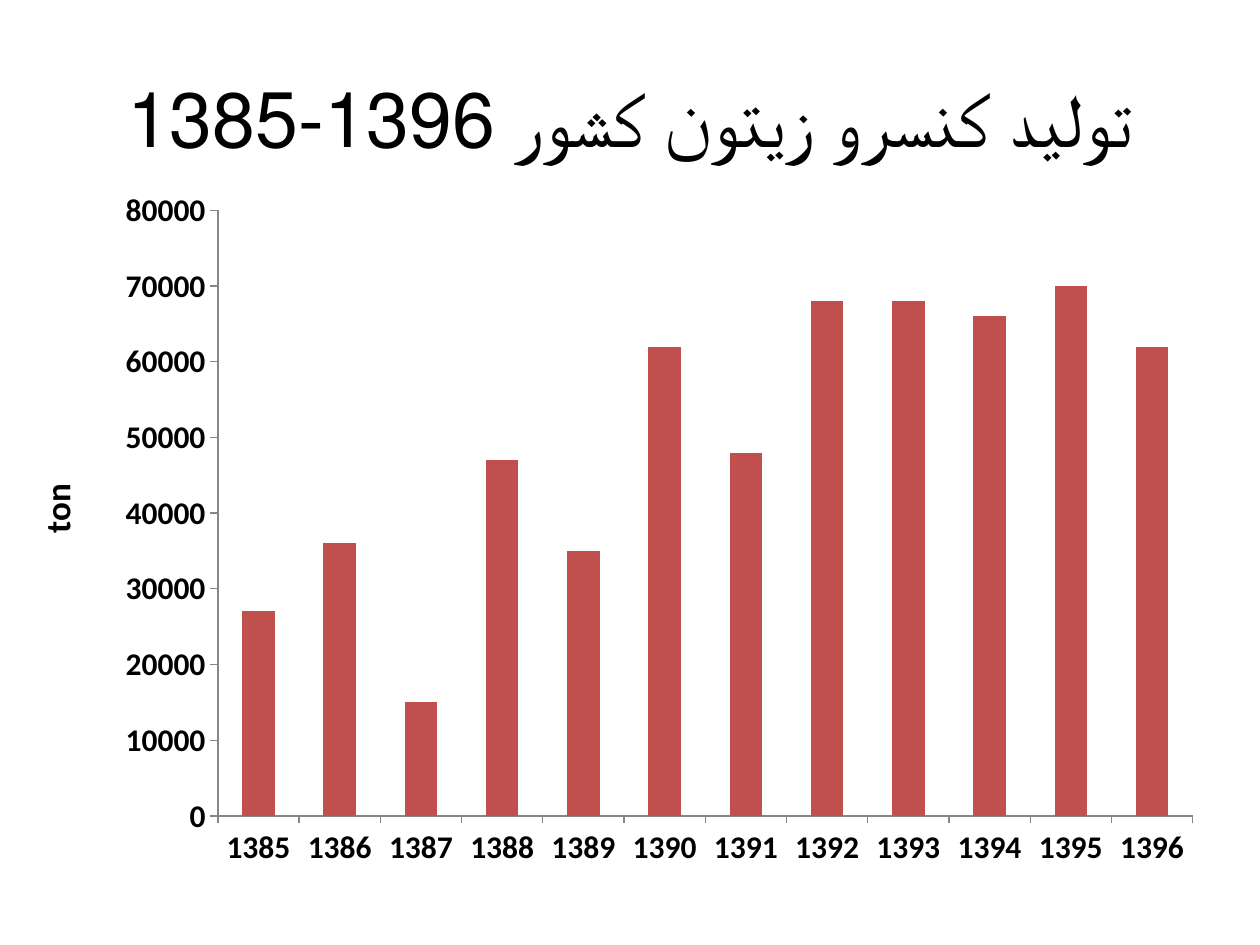
import pptx
import pptx.chart.data
import pptx.dml.color
import pptx.enum.chart
import pptx.enum.text
import pptx.oxml
import pptx.oxml.ns
import pptx.util
from pptx.util import Cm

BLACK = pptx.dml.color.RGBColor(0x00, 0x00, 0x00)
GREY = pptx.dml.color.RGBColor(0x86, 0x86, 0x86)
RED = pptx.dml.color.RGBColor(0xC0, 0x50, 0x4D)
FACE = "Calibri"
START = 1385
TONS = [27000, 36000, 15000, 47000, 35000, 62000,
        48000, 68000, 68000, 66000, 70000, 62000]
PLOT = {"x": 0.1, "y": 0.05, "w": 0.88, "h": 0.86}


def style(font, size, bold):
    """Set the shared face and colour with a given size and weight."""
    font.name = FACE
    font.size = pptx.util.Pt(size)
    font.bold = bold
    font.color.rgb = BLACK


def write(shape, text, size, bold):
    """Put one centred line of styled text in a shape."""
    frame = shape.text_frame
    frame.text = text
    frame.word_wrap = True
    frame.vertical_anchor = pptx.enum.text.MSO_ANCHOR.MIDDLE
    para = frame.paragraphs[0]
    para.alignment = pptx.enum.text.PP_ALIGN.CENTER
    style(para.runs[0].font, size, bold)
    return para


def add_title(slide, text):
    """Fill the title placeholder with right-to-left text."""
    title = slide.shapes.title
    title.left, title.top = Cm(1.27), Cm(0.76)
    title.width, title.height = Cm(22.86), Cm(3.18)
    para = write(title, text, 44, False)
    para._p.get_or_add_pPr().set("rtl", "1")


def add_unit(slide, text):
    """Add the upright unit label beside the chart."""
    box = slide.shapes.add_textbox(Cm(0.13), Cm(9.19), Cm(2.01), Cm(2.11))
    box.rotation = 270
    write(box, text, 20, True)


def set_axis(axis):
    """Give an axis outer ticks, a grey line and no grid."""
    axis.has_major_gridlines = False
    axis.major_tick_mark = pptx.enum.chart.XL_TICK_MARK.OUTSIDE
    axis.minor_tick_mark = pptx.enum.chart.XL_TICK_MARK.NONE
    axis.format.line.color.rgb = GREY
    axis.format.line.width = pptx.util.Pt(0.75)


def set_plot(chart):
    """Fix the inner plot area as shares of the chart."""
    area = chart._chartSpace.chart.plotArea
    for old in area.findall(pptx.oxml.ns.qn("c:layout")):
        area.remove(old)
    sizes = "".join(f'<c:{key} val="{val}"/>' for key, val in PLOT.items())
    area.insert(0, pptx.oxml.parse_xml(
        f'<c:layout {pptx.oxml.ns.nsdecls("c")}><c:manualLayout>'
        '<c:layoutTarget val="inner"/><c:xMode val="edge"/>'
        f'<c:yMode val="edge"/>{sizes}</c:manualLayout></c:layout>'))


def add_bars(slide):
    """Add the column chart of tons per year."""
    data = pptx.chart.data.CategoryChartData(number_format="0")
    data.categories = [str(START + step) for step in range(len(TONS))]
    data.add_series("Series 1", TONS)
    chart = slide.shapes.add_chart(
        pptx.enum.chart.XL_CHART_TYPE.COLUMN_CLUSTERED,
        Cm(2.16), Cm(3.53), Cm(22.33), Cm(14.2), data).chart
    chart.has_title = False
    chart.has_legend = False
    style(chart.font, 18, True)
    for axis in (chart.category_axis, chart.value_axis):
        set_axis(axis)
    scale = chart.value_axis
    scale.minimum_scale, scale.maximum_scale = 0, 80000
    scale.major_unit = 10000
    scale.tick_labels.number_format = "0"
    scale.tick_labels.number_format_is_linked = False
    plot = chart.plots[0]
    plot.gap_width = 150
    plot.vary_by_categories = False
    fill = plot.series[0].format.fill
    fill.solid()
    fill.fore_color.rgb = RED
    set_plot(chart)


def main():
    """Build and save the slide."""
    deck = pptx.Presentation()
    deck.slide_width, deck.slide_height = Cm(25.4), Cm(19.05)
    slide = deck.slides.add_slide(deck.slide_layouts[5])
    add_title(slide, "تولید کنسرو زیتون کشور 1396-1385")
    add_unit(slide, "ton")
    add_bars(slide)
    deck.save("out.pptx")


if __name__ == "__main__":
    main()
